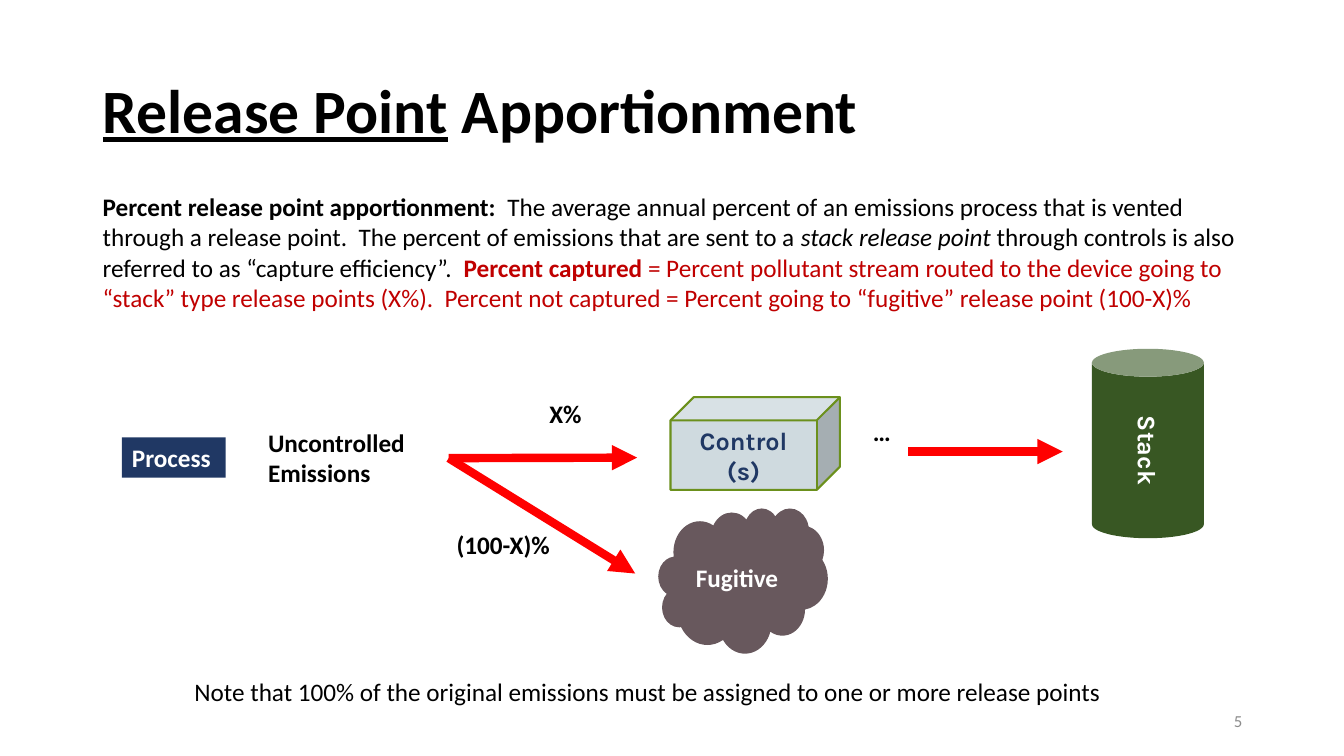
"""Build the slide on apportioning emissions between release points."""
from dataclasses import dataclass

from lxml.etree import SubElement
from pptx import Presentation
from pptx.dml.color import RGBColor
from pptx.enum.shapes import MSO_CONNECTOR, MSO_SHAPE
from pptx.enum.text import MSO_ANCHOR, MSO_AUTO_SIZE, PP_ALIGN
from pptx.oxml.ns import qn
from pptx.util import Pt

EMU_PER_PX = 9144


def px(length):
    return length * EMU_PER_PX


@dataclass(frozen=True)
class Theme:
    black: str = "000000"
    white: str = "FFFFFF"
    grey: str = "8C8C8C"
    crimson: str = "C00000"
    red: str = "FF0000"
    navy: str = "203864"
    mist: str = "CFDADF"
    olive: str = "6B901C"
    forest: str = "385723"
    mauve: str = "68585D"
    body_font: str = "Calibri"
    accent_font: str = "Karla"
    title_size: int = 44
    body_size: int = 18
    number_size: int = 12
    arrow_width: int = 6
    outline_width: float = 1.5


class SlideBuilder:
    def __init__(self, theme, slide):
        self.theme = theme
        self.slide = slide

    def fill_text(self, frame, runs, size=None, color=None, font=None,
                  align=PP_ALIGN.LEFT, anchor=MSO_ANCHOR.TOP, grow=False):
        frame.word_wrap = True
        frame.auto_size = MSO_AUTO_SIZE.SHAPE_TO_FIT_TEXT if grow else MSO_AUTO_SIZE.NONE
        frame.vertical_anchor = anchor
        paragraph = frame.paragraphs[0]
        paragraph.alignment = align
        for text, style in runs:
            run = paragraph.add_run()
            run.text = text
            run.font.name = font or self.theme.body_font
            run.font.size = Pt(size or self.theme.body_size)
            run.font.bold = style.get("bold", False)
            run.font.italic = style.get("italic", False)
            run.font.underline = style.get("underline", False)
            run.font.color.rgb = RGBColor.from_string(
                style.get("color", color or self.theme.black))
        return paragraph

    def title(self, box, runs):
        heading = self.slide.shapes.title
        heading.left, heading.top, heading.width, heading.height = map(px, box)
        paragraph = self.fill_text(heading.text_frame, runs, size=self.theme.title_size,
                                   anchor=MSO_ANCHOR.MIDDLE)
        paragraph.line_spacing = 0.9

    def text(self, box, runs, **options):
        label = self.slide.shapes.add_textbox(*map(px, box))
        self.fill_text(label.text_frame, runs, **{"grow": True, **options})
        return label

    def block(self, kind, box, fill, caption, outline=None, vertical=False, **options):
        block = self.slide.shapes.add_shape(kind, *map(px, box))
        block.shadow.inherit = False
        block.fill.solid()
        block.fill.fore_color.rgb = RGBColor.from_string(fill)
        if outline:
            block.line.color.rgb = RGBColor.from_string(outline)
            block.line.width = Pt(self.theme.outline_width)
        else:
            block.line.fill.background()
        centred = {"align": PP_ALIGN.CENTER, "anchor": MSO_ANCHOR.MIDDLE}
        self.fill_text(block.text_frame, [(caption, {"bold": True})],
                       **{**centred, **options})
        if vertical:
            block.text_frame._txBody.bodyPr.set("vert", "vert")

    def arrow(self, start, end, source=None):
        arrow = self.slide.shapes.add_connector(
            MSO_CONNECTOR.STRAIGHT, *map(px, (*start, *end)))
        if source is not None:
            arrow.begin_connect(source, 3)
        arrow.line.color.rgb = RGBColor.from_string(self.theme.red)
        arrow.line.width = Pt(self.theme.arrow_width)
        SubElement(arrow.line._get_or_add_ln(), qn("a:tailEnd"), type="triangle")
        SubElement(arrow._element.spPr, qn("a:effectLst"))


def main():
    deck = Presentation()
    deck.slide_width, deck.slide_height = px(1333), px(750)
    theme = Theme()
    page = SlideBuilder(theme, deck.slides.add_slide(deck.slide_layouts[5]))
    bold = {"bold": True}

    page.title((92, 40, 1150, 145), [
        ("Release Point", {"bold": True, "underline": True}),
        (" Apportionment", bold),
    ])
    page.text((92, 185, 1177, 131), [
        ("Percent release point apportionment:  ", bold),
        ("The average annual percent of an emissions process that is vented through a "
         "release point.  The percent of emissions that are sent to a ", {}),
        ("stack release point ", {"italic": True}),
        ("through controls is also referred to as “capture efficiency”.  ", {}),
        ("Percent captured ", {"bold": True, "color": theme.crimson}),
        ("= Percent pollutant stream routed to the device going to “stack” type release "
         "points (X%).  Percent not captured = Percent going to “fugitive” release point "
         "(100-X)%", {"color": theme.crimson}),
    ])

    page.block(MSO_SHAPE.RECTANGLE, (121, 434, 103, 40), theme.navy, "Process",
               color=theme.white, align=PP_ALIGN.LEFT, anchor=MSO_ANCHOR.TOP, grow=True)
    emissions = page.text((256, 419, 189, 71), [("Uncontrolled Emissions", bold)])
    page.text((535, 390, 63, 40), [("X%", bold)])
    page.arrow((445, 455), (632, 454), source=emissions)
    page.block(MSO_SHAPE.CUBE, (665, 394, 168, 92), theme.mist, "Control (s)",
               outline=theme.olive, color=theme.navy, font=theme.accent_font)
    page.text((856, 408, 144, 40), [("…", bold)])
    page.block(MSO_SHAPE.CAN, (1083, 346, 111, 188), theme.forest, "Stack",
               vertical=True, color=theme.white, font=theme.accent_font)
    page.text((443, 520, 118, 40), [("(100-X)%", bold)])
    page.arrow((445, 455), (630, 569), source=emissions)
    page.block(MSO_SHAPE.CLOUD, (653, 504, 168, 144), theme.mauve, "Fugitive",
               color=theme.white)
    page.arrow((901, 448), (1054, 448))

    page.text((183, 666, 1012, 40), [
        ("Note that 100% of the original emissions must be assigned to one or more "
         "release points", {}),
    ])
    page.text((942, 695, 300, 40), [("5", {})], size=theme.number_size, color=theme.grey,
              align=PP_ALIGN.RIGHT, anchor=MSO_ANCHOR.MIDDLE, grow=False)
    deck.save("out.pptx")


if __name__ == "__main__":
    main()
